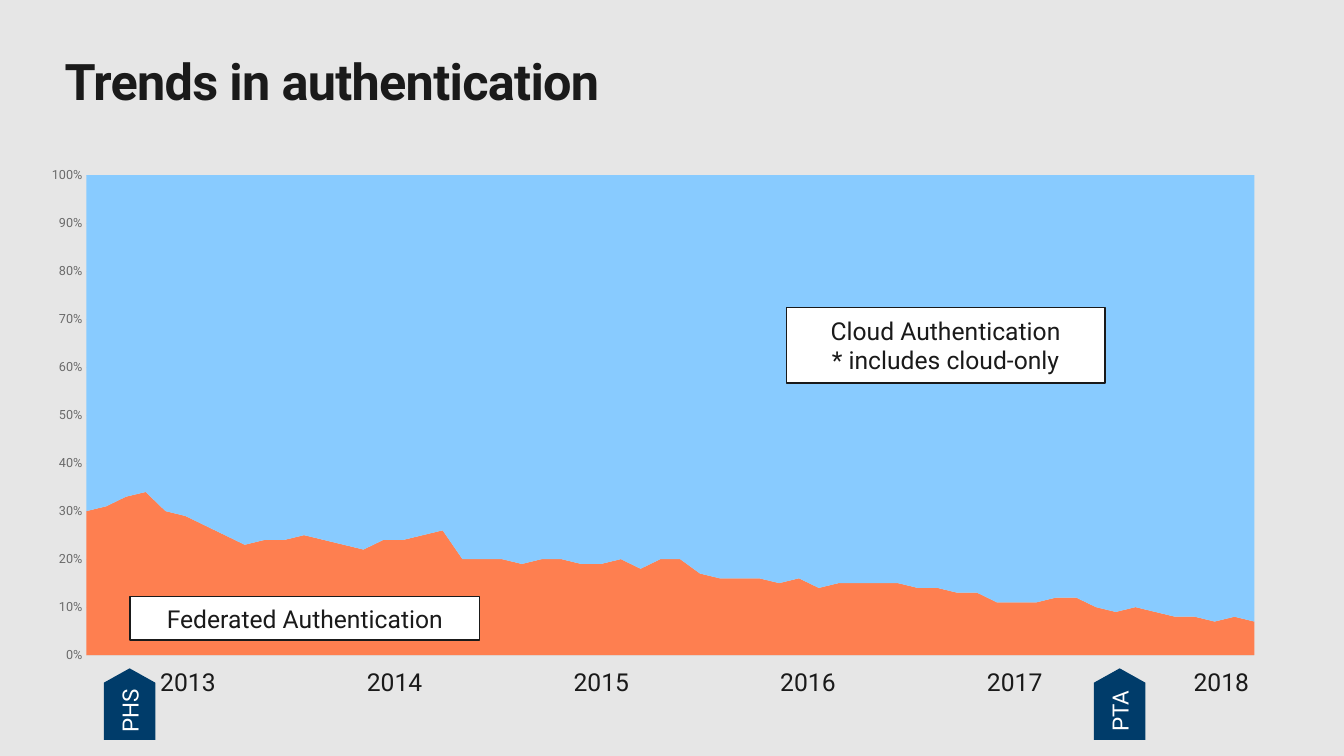
import pptx
import pptx.chart.data
import pptx.dml.color
import pptx.enum.chart
import pptx.enum.shapes
import pptx.enum.text
import pptx.oxml
import pptx.util
from pptx.util import Inches

INK = "1A1A1A"
WHITE = "FFFFFF"


def color(hex_value):
    return pptx.dml.color.RGBColor.from_string(hex_value)


def write(shape, text, size, ink=INK, align=None, bold=None):
    """Fill the shape with one paragraph per line of text, vertically centred."""
    frame = shape.text_frame
    frame.word_wrap = True
    frame.vertical_anchor = pptx.enum.text.MSO_ANCHOR.MIDDLE
    frame.text = text
    for paragraph in frame.paragraphs:
        paragraph.alignment = align
        paragraph.font.name = "Roboto"
        paragraph.font.size = pptx.util.Pt(size)
        paragraph.font.color.rgb = color(ink)
        paragraph.font.bold = bold
    return frame


prs = pptx.Presentation()
prs.slide_width = Inches(13.33)
prs.slide_height = Inches(7.5)
slide = prs.slides.add_slide(prs.slide_layouts[6])
slide.background.fill.solid()
slide.background.fill.fore_color.rgb = color("E6E6E6")
center = pptx.enum.text.PP_ALIGN.CENTER

# Title
title = slide.shapes.add_textbox(Inches(0.64), Inches(0.5), Inches(12.05), Inches(0.61))
title_frame = write(title, "Trends in authentication", 36, bold=True)
title_frame.margin_left = title_frame.margin_right = 0
title_frame.margin_top = title_frame.margin_bottom = 0
title_frame.vertical_anchor = pptx.enum.text.MSO_ANCHOR.TOP
title_frame.paragraphs[0].runs[0]._r.get_or_add_rPr().set("spc", "-50")

# Share of federated and cloud sign-ins
federated = [
    30, 31, 33, 34, 30, 29, 27, 25, 23, 24, 24, 25, 24, 23, 22, 24, 24, 25, 26, 20,
    20, 20, 19, 20, 20, 19, 19, 20, 18, 20, 20, 17, 16, 16, 16, 15, 16, 14, 15, 15,
    15, 15, 14, 14, 13, 13, 11, 11, 11, 12, 12, 10, 9, 10, 9, 8, 8, 7, 8, 7,
]
shares = pptx.chart.data.CategoryChartData()
shares.categories = [str(month) for month in range(1, len(federated) + 1)]
shares.add_series("Series 1", federated)
shares.add_series("Series 2", [100 - share for share in federated])
chart = slide.shapes.add_chart(
    pptx.enum.chart.XL_CHART_TYPE.AREA_STACKED_100,
    Inches(0.26), Inches(1.56), Inches(12.43), Inches(5.12), shares,
).chart
chart.has_legend = False
chart.has_title = False
chart.font.name = "Roboto"
chart.font.size = pptx.util.Pt(10)
chart.font.color.rgb = color(INK)
plot = chart.plots[0]
plot.vary_by_categories = False
for series, fill in zip(plot.series, ["FE7F50", "88CBFF"]):
    series.format.fill.solid()
    series.format.fill.fore_color.rgb = color(fill)
    series.format.line.fill.background()

chart.category_axis.visible = False
chart.category_axis.has_major_gridlines = False
share_axis = chart.value_axis
share_axis.minimum_scale = 0
share_axis.maximum_scale = 1
share_axis.major_unit = 0.1
share_axis.major_tick_mark = pptx.enum.chart.XL_TICK_MARK.NONE
share_axis.minor_tick_mark = pptx.enum.chart.XL_TICK_MARK.NONE
share_axis.format.line.fill.background()
share_axis.major_gridlines.format.line.color.rgb = color("DDDDDD")
share_axis.major_gridlines.format.line.width = pptx.util.Pt(0.75)
share_axis.tick_labels.number_format = "0%"
share_axis.tick_labels.number_format_is_linked = False
share_axis.tick_labels.font.name = "Roboto"
share_axis.tick_labels.font.size = pptx.util.Pt(9)
share_axis.tick_labels.font.color.rgb = color("6A6A6A")

# Areas run edge to edge inside a fixed plot frame
for crossing in chart._chartSpace.xpath(".//c:valAx/c:crossBetween"):
    crossing.set("val", "midCat")
plot_area = chart._chartSpace.chart.plotArea
for layout in plot_area.xpath("c:layout"):
    plot_area.remove(layout)
plot_area.insert(0, pptx.oxml.parse_xml(
    '<c:layout xmlns:c="http://schemas.openxmlformats.org/drawingml/2006/chart">'
    '<c:manualLayout><c:layoutTarget val="inner"/>'
    '<c:xMode val="edge"/><c:yMode val="edge"/>'
    '<c:x val="0.048"/><c:y val="0.035"/><c:w val="0.932"/><c:h val="0.93"/>'
    '</c:manualLayout></c:layout>'
))

# Labels on the two areas
for text, left, top, width, height in [
    ("Federated Authentication", 1.29, 5.92, 3.47, 0.43),
    ("Cloud Authentication\n* includes cloud-only", 7.8, 3.05, 3.16, 0.75),
]:
    label = slide.shapes.add_shape(
        pptx.enum.shapes.MSO_SHAPE.RECTANGLE,
        Inches(left), Inches(top), Inches(width), Inches(height),
    )
    label.shadow.inherit = False
    label.fill.solid()
    label.fill.fore_color.rgb = color(WHITE)
    label.line.color.rgb = color(INK)
    label.line.width = pptx.util.Pt(0.85)
    write(label, text, 17.6, align=center)

# Years under the chart
for step, year in enumerate(range(2013, 2019)):
    year_box = slide.shapes.add_textbox(
        Inches(1.49 + 2.05 * step), Inches(6.55), Inches(0.79), Inches(0.43)
    )
    write(year_box, str(year), 17.6)

# Launch markers pointing up at the time line
for launch, left in [("PTA", 10.85), ("PHS", 1.03)]:
    marker = slide.shapes.add_shape(
        pptx.enum.shapes.MSO_SHAPE.FLOWCHART_OFFPAGE_CONNECTOR,
        Inches(left), Inches(6.63), Inches(0.51), Inches(0.71),
    )
    marker.rotation = 180
    marker.shadow.inherit = False
    marker.fill.solid()
    marker.fill.fore_color.rgb = color("003C6A")
    marker.line.fill.background()
    marker_frame = write(marker, launch, 16, WHITE, center)
    marker_frame.word_wrap = False
    marker_frame.margin_left = marker_frame.margin_right = 0
    marker_frame.margin_top = marker_frame.margin_bottom = Inches(0.05)
    marker_frame._txBody.bodyPr.set("vert", "vert")

prs.save("out.pptx")
